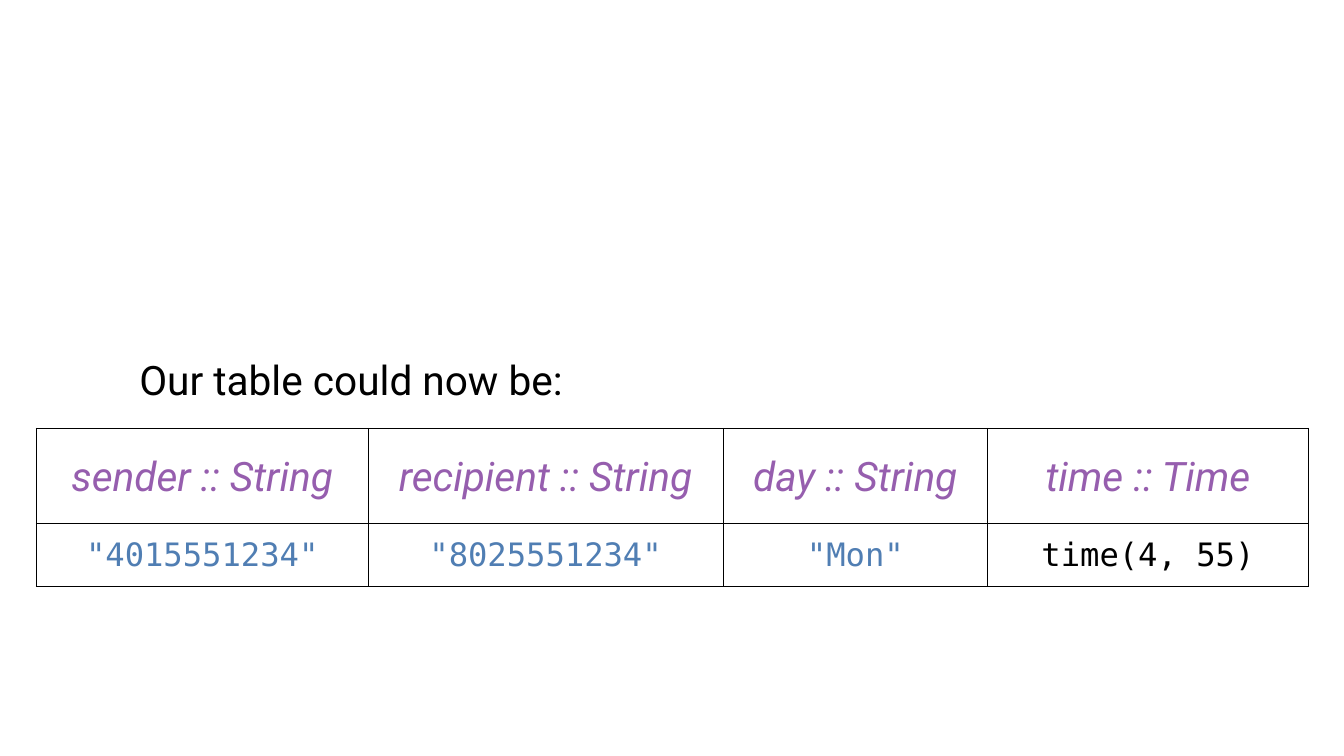
from lxml import etree
from pptx import Presentation
from pptx.dml.color import RGBColor
from pptx.enum.text import MSO_ANCHOR, PP_ALIGN
from pptx.oxml.ns import qn
from pptx.util import Pt

MIDDLE = MSO_ANCHOR.MIDDLE
LEFT, CENTER = PP_ALIGN.LEFT, PP_ALIGN.CENTER
BLACK = RGBColor(0x00, 0x00, 0x00)
WHITE = RGBColor(0xFF, 0xFF, 0xFF)
PURPLE = RGBColor(0x96, 0x5E, 0xAE)
BLUE = RGBColor(0x50, 0x7E, 0xB3)

BODY = {"name": "Roboto", "size": Pt(58), "italic": False}
HEAD = {"name": "Roboto", "size": Pt(58), "italic": True}
CODE = {"name": "DejaVu Sans Mono", "size": Pt(46), "italic": False}
LOOSE = {"line_spacing": Pt(73), "space_before": Pt(37)}
TIGHT = {"line_spacing": Pt(56), "space_before": Pt(0)}
SIDES = ("left", "top", "right", "bottom")

COLS = (474, 507, 378, 458)
ROWS = (135, 91)
FIELDS = [("sender :: String", PURPLE), ("recipient :: String", PURPLE),
          ("day :: String", PURPLE), ("time :: Time", PURPLE)]
VALUES = [('"4015551234"', BLUE), ('"8025551234"', BLUE),
          ('"Mon"', BLUE), ("time(4, 55)", BLACK)]


def apply(item, values):
    for key, value in values.items():
        setattr(item, key, value)


def write(frame, text, color, font, space, align):
    line = frame.paragraphs[0]
    apply(line, {"alignment": align, **space})
    run = line.add_run()
    run.text = text
    apply(run.font, font)
    run.font.color.rgb = color


def border(cell, widths):
    props = cell._tc.get_or_add_tcPr()
    for side, width in widths.items():
        edge = etree.SubElement(props, qn("a:ln" + side), w=str(Pt(width)))
        fill = etree.SubElement(edge, qn("a:solidFill"))
        etree.SubElement(fill, qn("a:srgbClr"), val=str(BLACK))


def intro(slide, left, top, width, height):
    box = slide.shapes.add_textbox(Pt(left), Pt(top), Pt(width), Pt(height))
    frame = box.text_frame
    apply(frame, {"word_wrap": True, "vertical_anchor": MIDDLE})
    apply(frame, {"margin_" + side: Pt(6) for side in SIDES})
    write(frame, "Our table could now be:", BLACK, BODY, LOOSE, LEFT)


def grid(slide, left, top, width, height):
    table = slide.shapes.add_table(len(ROWS), len(COLS), Pt(left), Pt(top),
                                   Pt(width), Pt(height)).table
    apply(table, {"first_row": False, "horz_banding": False})
    for col, size in zip(table.columns, COLS):
        col.width = Pt(size)
    for row, size in zip(table.rows, ROWS):
        row.height = Pt(size)

    # Field names above, sample values below
    styles = [(FIELDS, HEAD, LOOSE), (VALUES, CODE, TIGHT)]
    for r, (items, font, space) in enumerate(styles):
        for c, (text, color) in enumerate(items):
            cell = table.cell(r, c)
            apply(cell, {"vertical_anchor": MIDDLE})
            apply(cell, {"margin_" + side: Pt(5) for side in SIDES})
            write(cell.text_frame, text, color, font, space, CENTER)
            # Outer edges are twice as thick as inner ones
            outer = {"L": c == 0, "R": c == len(COLS) - 1,
                     "T": r == 0, "B": r == len(ROWS) - 1}
            border(cell, {side: 2 if out else 1 for side, out in outer.items()})
            cell.fill.solid()
            cell.fill.fore_color.rgb = WHITE


def main():
    deck = Presentation()
    deck.slide_width, deck.slide_height = Pt(1920), Pt(1080)
    slide = deck.slides.add_slide(deck.slide_layouts[6])
    intro(slide, 193, 20, 1229, 1040)
    grid(slide, 52, 612, sum(COLS), sum(ROWS))
    deck.save("out.pptx")


if __name__ == "__main__":
    main()
